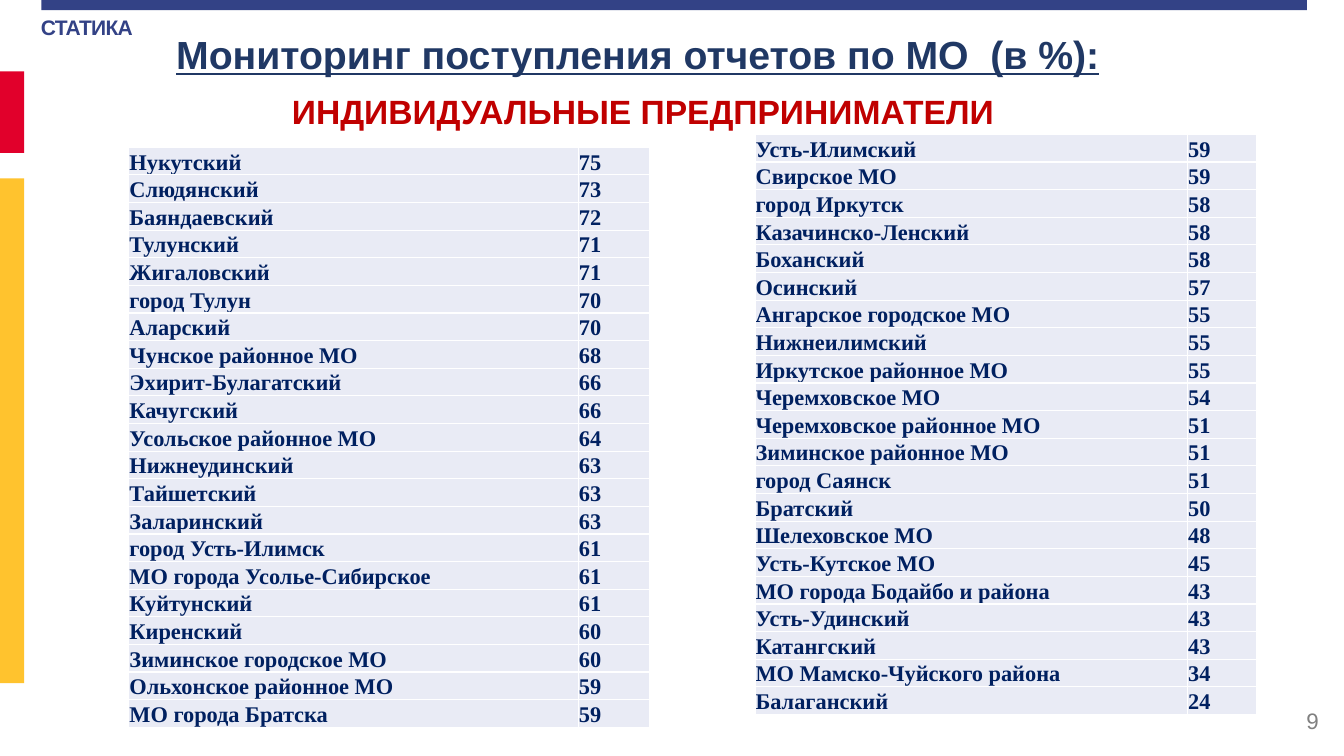
from lxml.etree import SubElement as Sub
from pptx import Presentation
from pptx.dml.color import RGBColor as Rgb
from pptx.enum.shapes import MSO_SHAPE as Shape
from pptx.enum.text import MSO_ANCHOR as Anchor, PP_ALIGN as Align
from pptx.oxml.ns import qn
from pptx.util import Pt

HEX = {
    "blue": "334286", "red": "E1002B", "gold": "FFC32E", "gray": "808080",
    "navy": "203864", "brick": "C00000", "ink": "002060",
    "cell": "E9EBF5", "white": "FFFFFF",
}

# Text formats
MARK = {"name": "Arial", "size": Pt(15), "bold": True}
HEAD = {"name": "Arial", "size": Pt(28), "bold": True, "underline": True}
SUB = {"name": "Arial", "size": Pt(24), "bold": True}
PAGE = {"name": "Arial", "size": Pt(16)}
BODY = {"name": "Times New Roman", "size": Pt(16), "bold": True}

ROW = 19.75  # height of a table row

LEFT = [
    ("Нукутский", 75), ("Слюдянский", 73), ("Баяндаевский", 72),
    ("Тулунский", 71), ("Жигаловский", 71), ("город Тулун", 70),
    ("Аларский", 70), ("Чунское районное МО", 68),
    ("Эхирит-Булагатский", 66), ("Качугский", 66),
    ("Усольское районное МО", 64), ("Нижнеудинский", 63),
    ("Тайшетский", 63), ("Заларинский", 63), ("город Усть-Илимск", 61),
    ("МО города Усолье-Сибирское", 61), ("Куйтунский", 61),
    ("Киренский", 60), ("Зиминское городское МО", 60),
    ("Ольхонское районное МО", 59), ("МО города Братска", 59),
]
RIGHT = [
    ("Усть-Илимский", 59), ("Свирское МО", 59), ("город Иркутск", 58),
    ("Казачинско-Ленский", 58), ("Боханский", 58), ("Осинский", 57),
    ("Ангарское городское МО", 55), ("Нижнеилимский", 55),
    ("Иркутское районное МО", 55), ("Черемховское МО", 54),
    ("Черемховское районное МО", 51), ("Зиминское районное МО", 51),
    ("город Саянск", 51), ("Братский", 50), ("Шелеховское МО", 48),
    ("Усть-Кутское МО", 45), ("МО города Бодайбо и района", 43),
    ("Усть-Удинский", 43), ("Катангский", 43),
    ("МО Мамско-Чуйского района", 34), ("Балаганский", 24),
]


def put(obj, form):
    for key, val in form.items():
        setattr(obj, key, val)


def write(para, text, form, color):
    run = para.add_run()
    run.text = text
    put(run.font, form)
    run.font.color.rgb = Rgb.from_string(HEX[color])
    return run


def frame(slide, box, **form):
    text = slide.shapes.add_textbox(*map(Pt, box)).text_frame
    put(text, {"word_wrap": True, **form})
    return text


def bar(slide, box, color):
    rect = slide.shapes.add_shape(Shape.RECTANGLE, *map(Pt, box))
    rect.shadow.inherit = False
    rect.fill.solid()
    rect.fill.fore_color.rgb = Rgb.from_string(HEX[color])
    rect.line.fill.background()


def border(slide, box):
    x, y, wide, high = box
    # Corner label
    text = frame(slide, (x + 29.3, y + 9.5, 83, 23), margin_left=0,
                 margin_right=0, margin_top=Pt(1), margin_bottom=0)
    para = text.paragraphs[0]
    para.space_before = Pt(1)
    run = write(para, "СТАТИКА", MARK, "blue")
    run.font._element.set("spc", "-50")
    # Top band and side stripes
    bar(slide, (x + 29.5, y, wide - 56, 7.2), "blue")
    bar(slide, (x, y + 51, 17.3, 58.3), "red")
    bar(slide, (x, y + 127.5, 17.3, 360.5), "gold")
    # Page number
    text = frame(slide, (x + wide - 227, y + high - 39.6, 216, 28.8),
                 vertical_anchor=Anchor.MIDDLE)
    para = text.paragraphs[0]
    para.alignment = Align.RIGHT
    write(para, "9", PAGE, "gray")


def title(slide, box):
    text = frame(slide, box)
    top, low = text.paragraphs[0], text.add_paragraph()
    top.space_before = low.space_before = Pt(10)
    low.alignment = Align.CENTER
    write(top, "Мониторинг поступления отчетов по МО  (в %):", HEAD, "navy")
    write(low, "ИНДИВИДУАЛЬНЫЕ ПРЕДПРИНИМАТЕЛИ ", SUB, "brick")


def edge(cell):
    props = cell._tc.get_or_add_tcPr()
    for spot, side in enumerate(("lnL", "lnR", "lnT", "lnB")):
        line = Sub(props, qn(f"a:{side}"), w=str(Pt(1)))
        fill = Sub(line, qn("a:solidFill"))
        Sub(fill, qn("a:srgbClr"), val=HEX["white"])
        props.insert(spot, line)


def table(slide, box, rows):
    x, y, wide, num = box
    grid = slide.shapes.add_table(
        len(rows), 2, Pt(x), Pt(y), Pt(wide), Pt(ROW * len(rows))).table
    put(grid, {"first_row": False, "horz_banding": False})
    grid.columns[0].width = Pt(wide - num)
    grid.columns[1].width = Pt(num)
    for r, row in enumerate(rows):
        grid.rows[r].height = Pt(ROW)
        for c, val in enumerate(row):
            cell = grid.cell(r, c)
            put(cell, {"margin_left": Pt(0.5), "margin_right": Pt(0.5),
                       "margin_top": Pt(0.5), "margin_bottom": 0,
                       "vertical_anchor": Anchor.BOTTOM})
            cell.fill.solid()
            cell.fill.fore_color.rgb = Rgb.from_string(HEX["cell"])
            edge(cell)
            write(cell.text_frame.paragraphs[0], str(val), BODY, "ink")


def main():
    deck = Presentation()
    put(deck, {"slide_width": Pt(960), "slide_height": Pt(540)})
    slide = deck.slides.add_slide(deck.slide_layouts[6])
    border(slide, (0, 0, 960, 540))
    title(slide, (118.8, 18, 687.6, 80.6))
    # Districts with their share of reports
    table(slide, (92, 105.2, 372.2, 51.1), LEFT)
    table(slide, (539.3, 96, 358.6, 49.7), RIGHT)
    deck.save("out.pptx")


if __name__ == "__main__":
    main()
